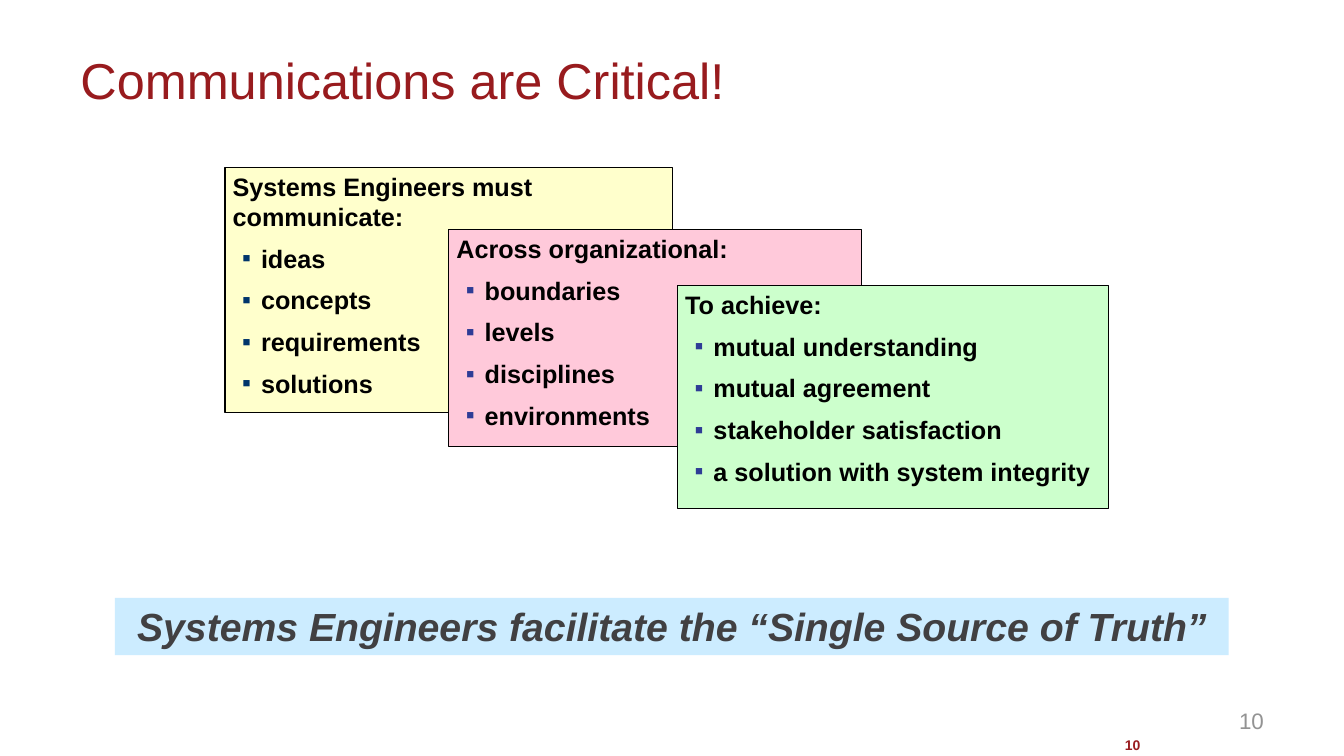
from lxml import etree
from pptx import Presentation
from pptx.dml.color import RGBColor
from pptx.enum import shapes, text
from pptx.oxml import ns
from pptx.util import Pt

COLORS = {
    "title": "981B1E", "badge": "991C1F", "number": "939393",
    "black": "000000", "slogan": "414042", "banner": "CCECFF",
    "yellow": "FFFFCC", "pink": "FFC9DA", "green": "CCFFCC",
    "navy": "00356B", "blue": "2E3C96",
}
CARDS = [
    ((160.6, 119.5, 319.7, 175), "yellow", "navy", "Systems Engineers must communicate:",
     ["ideas", "concepts", "requirements", "solutions"]),
    ((320.4, 164, 295.2, 154.8), "pink", "blue", "Across organizational:",
     ["boundaries", "levels", "disciplines", "environments"]),
    ((483.8, 204, 308.2, 159.1), "green", "blue", "To achieve:",
     ["mutual understanding", "mutual agreement", "stakeholder satisfaction",
      "a solution with system integrity"]),
]


def rgb(name):
    """Return the named colour."""
    return RGBColor.from_string(COLORS[name])


def write(p, words, size=18, color="black", bold=False, italic=False,
          align=text.PP_ALIGN.LEFT):
    """Add one formatted run to a paragraph."""
    p.alignment = align
    r = p.add_run()
    r.text = words
    r.font.name = "Arial"
    r.font.size = Pt(size)
    r.font.bold = bold
    r.font.italic = italic
    r.font.color.rgb = rgb(color)


def set_frame(tf, inset_x, inset_y, wrap=True, anchor=text.MSO_ANCHOR.MIDDLE):
    """Set the insets, wrapping and anchor of a text frame."""
    tf.margin_left = tf.margin_right = Pt(inset_x)
    tf.margin_top = tf.margin_bottom = Pt(inset_y)
    tf.word_wrap = wrap
    tf.auto_size = text.MSO_AUTO_SIZE.NONE
    tf.vertical_anchor = anchor


def set_bullet(p, color):
    """Give a paragraph a hanging square bullet."""
    pPr = p._p.get_or_add_pPr()
    pPr.set("marL", str(Pt(20.25)))
    pPr.set("indent", str(Pt(-13.5)))
    clr = etree.SubElement(pPr, ns.qn("a:buClr"))
    etree.SubElement(clr, ns.qn("a:srgbClr"), val=COLORS[color])
    etree.SubElement(pPr, ns.qn("a:buFont"), typeface="Arial")
    etree.SubElement(pPr, ns.qn("a:buChar"), char="▪")


def add_panel(s, box, fill):
    """Add a filled rectangle without outline or shadow."""
    sp = s.shapes.add_shape(shapes.MSO_SHAPE.RECTANGLE, *map(Pt, box))
    sp.shadow.inherit = False
    sp.fill.solid()
    sp.fill.fore_color.rgb = rgb(fill)
    sp.line.fill.background()
    return sp


def add_title(s, box, words):
    """Place and fill the title placeholder."""
    sp = s.shapes.title
    sp.left, sp.top, sp.width, sp.height = map(Pt, box)
    set_frame(sp.text_frame, 9.4, 4.7)
    write(sp.text_frame.paragraphs[0], words, size=36, color="title")


def add_card(s, box, fill, bullet, heading, items):
    """Add an outlined card with a heading and bulleted items."""
    sp = add_panel(s, box, fill)
    sp.line.color.rgb = rgb("black")
    sp.line.width = Pt(1)
    tf = sp.text_frame
    set_frame(tf, 5.6, 2.8, anchor=text.MSO_ANCHOR.TOP)
    write(tf.paragraphs[0], heading, bold=True)
    for item in items:
        p = tf.add_paragraph()
        p.level = 1
        set_bullet(p, bullet)
        p.space_before = Pt(8.1)
        write(p, item, bold=True)


def add_banner(s, box, words):
    """Add the closing slogan on a tinted band."""
    tf = add_panel(s, box, "banner").text_frame
    set_frame(tf, 7.2, 3.6, wrap=False, anchor=text.MSO_ANCHOR.TOP)
    write(tf.paragraphs[0], words, size=28, color="slogan", bold=True, italic=True,
          align=text.PP_ALIGN.CENTER)


def add_number(s, box, inset_x, inset_y, line_spacing=1.0, **style):
    """Add a right-aligned slide number."""
    tf = s.shapes.add_textbox(*map(Pt, box)).text_frame
    set_frame(tf, inset_x, inset_y)
    p = tf.paragraphs[0]
    p.line_spacing = line_spacing
    write(p, "10", align=text.PP_ALIGN.RIGHT, **style)


def main():
    """Build the slide and save it."""
    prs = Presentation()
    prs.slide_width, prs.slide_height = Pt(960), Pt(540)
    s = prs.slides.add_slide(prs.slide_layouts[5])
    add_title(s, (48, 11.5, 864, 90), "Communications are Critical!")
    add_number(s, (779.8, 522, 41.8, 18), 7.2, 3.6, line_spacing=1.2,
               size=10, color="badge", bold=True)
    for card in CARDS:
        add_card(s, *card)
    add_banner(s, (82.1, 427, 795.6, 41),
               "Systems Engineers facilitate the “Single Source of Truth”")
    add_number(s, (688.3, 500.4, 223.9, 28.8), 9.4, 4.7, size=16, color="number")
    prs.save("out.pptx")


if __name__ == "__main__":
    main()
